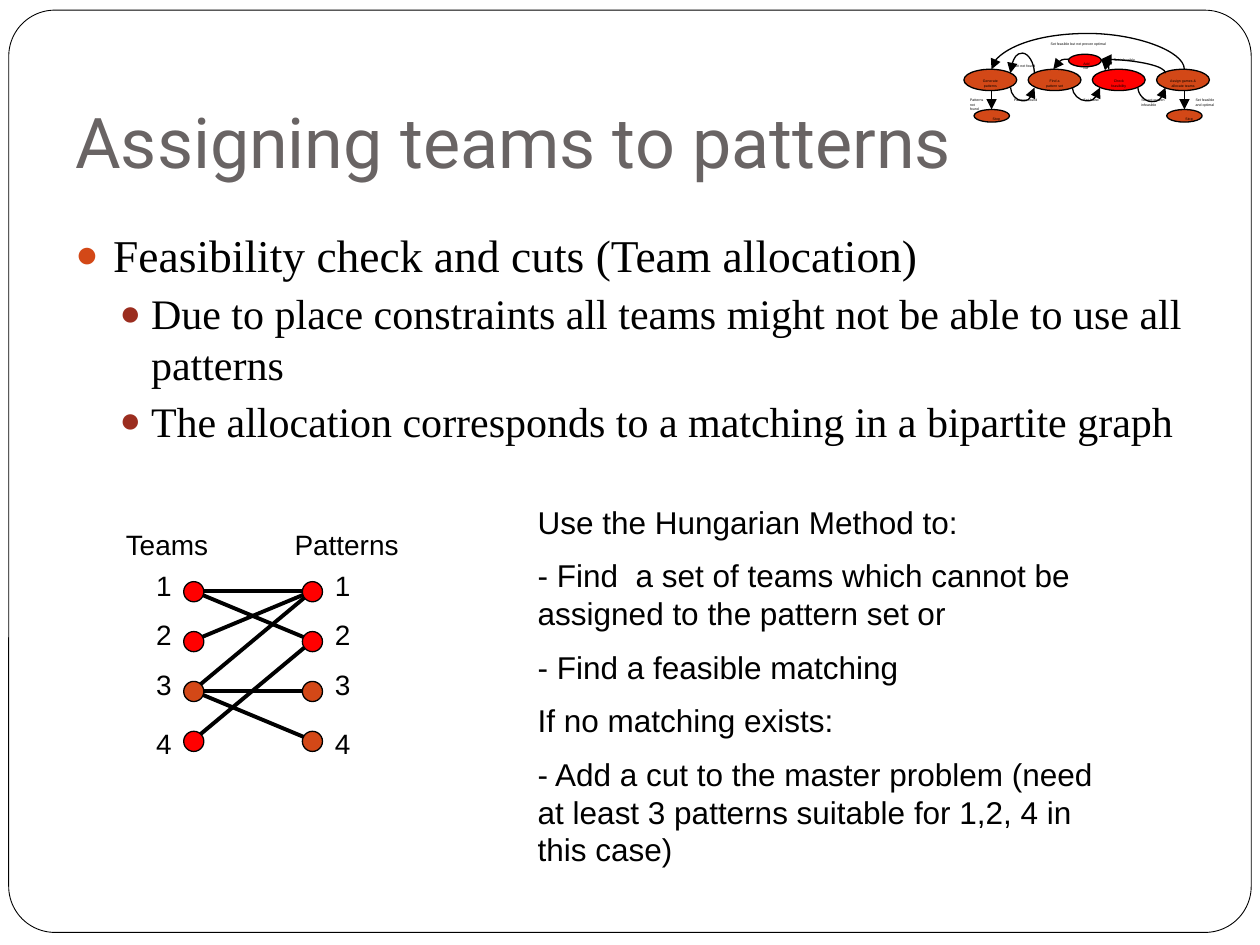
from lxml.etree import SubElement
from pptx import Presentation
from pptx.dml.color import RGBColor
from pptx.enum.shapes import MSO_CONNECTOR, MSO_SHAPE
from pptx.enum.text import MSO_ANCHOR, MSO_AUTO_SIZE, PP_ALIGN
from pptx.oxml.ns import qn
from pptx.util import Pt

ORANGE, RED, BLACK, WHITE = "D34817", "FF0000", "000000", "FFFFFF"

presentation = Presentation()
presentation.slide_width, presentation.slide_height = Pt(720), Pt(540)
slide = presentation.slides.add_slide(presentation.slide_layouts[6])
shapes = slide.shapes


def write(box, paragraphs, size, face="Arial", color=BLACK, frame_format=None, paragraph_format=None, gap=0):
    frame = shapes.add_textbox(*map(Pt, box)).text_frame
    for key, value in {"word_wrap": True, **(frame_format or {"auto_size": MSO_AUTO_SIZE.SHAPE_TO_FIT_TEXT})}.items():
        setattr(frame, key, value)
    for index, text in enumerate(paragraphs):
        paragraph = frame.paragraphs[0] if index == 0 else frame.add_paragraph()
        paragraph.text = text
        for key, value in {"space_before": Pt(gap if index else 0), **(paragraph_format or {})}.items():
            setattr(paragraph, key, value)
        for key, value in {"size": Pt(size), "name": face}.items():
            setattr(paragraph.runs[0].font, key, value)
        paragraph.runs[0].font.color.rgb = RGBColor.from_string(color)
    return frame


def draw(shape, weight, fill=None, arrow=False):
    shape.line.color.rgb = RGBColor.from_string(BLACK)
    shape.line.width = Pt(weight)
    if fill:
        shape.fill.solid()
        shape.fill.fore_color.rgb = RGBColor.from_string(fill)
        shape.shadow.inherit = False
    else:
        properties = shape._element.spPr
        if arrow:
            SubElement(properties.find(qn("a:ln")), qn("a:tailEnd"), type="triangle")
        SubElement(properties, qn("a:effectLst"))
    return shape


slide_border = shapes.add_shape(MSO_SHAPE.ROUNDED_RECTANGLE, Pt(5), Pt(5.8), Pt(710), Pt(527))
slide_border.adjustments[0] = 0.05
draw(slide_border, 0.5, WHITE)

write((36, 21.6, 648, 90), ["Assigning teams to patterns"], 40, "Roboto", "696464",
      {"vertical_anchor": MSO_ANCHOR.BOTTOM, "margin_bottom": Pt(7.2)})

outline = write((36, 126, 647.3, 356.4), [
    "Feasibility check and cuts (Team allocation)",
    "Due to place constraints all teams might not be able to use all patterns",
    "The allocation corresponds to a matching in a bipartite graph",
], 24, "Times New Roman", frame_format={"auto_size": MSO_AUTO_SIZE.NONE})
for paragraph, (level, size, before, left, hanging, bullet_color) in zip(
        outline.paragraphs, [(0, 26, 5.8, 21.6, 21.6, ORANGE)] + [(1, 24, 3.7, 43.2, 18, "9B2D1F")] * 2):
    for key, value in {"level": level, "space_before": Pt(before)}.items():
        setattr(paragraph, key, value)
    paragraph.runs[0].font.size = Pt(size)
    properties = paragraph._p.get_or_add_pPr()
    properties.set("marL", str(Pt(left)))
    properties.set("indent", str(-Pt(hanging)))
    SubElement(SubElement(properties, qn("a:buClr")), qn("a:srgbClr"), val=bullet_color)
    SubElement(properties, qn("a:buSzPct"), val="85000")
    SubElement(properties, qn("a:buFont"), typeface="Arial")
    SubElement(properties, qn("a:buChar"), char="●")

steps = [("Generate patterns", ORANGE, 24), ("Find a pattern set", ORANGE, 24),
         ("Check feasibility", RED, 24), ("Assign games & allocate teams", ORANGE, 30.2)]
for index, (step, color, label_width) in enumerate(steps):
    left = 550.8 + 36.7 * index
    draw(shapes.add_shape(MSO_SHAPE.OVAL, Pt(left), Pt(39.6), Pt(30.2), Pt(12.2)), 0.75, color)
    write((left + 15.1 - label_width / 2, 41.8, label_width, 12), [step], 2,
          paragraph_format={"alignment": PP_ALIGN.CENTER})

for left, top, width, color in [(610.6, 31, 18.7, RED), (556.6, 62.6, 20.2, ORANGE), (666.7, 62.6, 20.2, ORANGE)]:
    draw(shapes.add_shape(MSO_SHAPE.OVAL, Pt(left), Pt(top), Pt(width), Pt(7.2)), 0.75, color)

loop_thickness = 0.1
loops = [(577.4, 591.1, 50, 6.8), (591.1, 577.4, 41.8, -10), (612.7, 628.6, 50, 6.8),
         (676.8, 566.6, 39.6, -18), (650.2, 666, 50, 7.2)]
for start, end, level, depth in loops:
    span = abs(end - start)
    left, top = (start + end - loop_thickness) / 2, level - span / 2
    connector = shapes.add_connector(MSO_CONNECTOR.CURVE, Pt(left + loop_thickness), Pt(top), Pt(left), Pt(top + span))
    transform = connector._element.spPr.find(qn("a:xfrm"))
    transform.set("rot", "16200000")
    if depth < 0:
        transform.set("flipV", "1")
    guides = connector._element.spPr.find(qn("a:prstGeom")).find(qn("a:avLst"))
    SubElement(guides, qn("a:gd"), name="adj1", fmla=f"val {round(depth / loop_thickness * 100000)}")
    draw(connector, 0.75, arrow=True)

bends = [(633.6, 39.6, 629.3, 33.8, True), (610.6, 33.8, 601.9, 39.6, False), (666, 41.8, 629.3, 33.8, True)]
for x1, y1, x2, y2, upward in bends:
    corners = (x1, y1, x2, y2)
    if upward:
        middle_x, middle_y = (x1 + x2) / 2, (y1 + y2) / 2
        half_width, half_height = abs(y2 - y1) / 2, abs(x2 - x1) / 2
        corners = (middle_x + half_width, middle_y - half_height, middle_x - half_width, middle_y + half_height)
    connector = shapes.add_connector(MSO_CONNECTOR.CURVE, *map(Pt, corners))
    connector._element.spPr.find(qn("a:prstGeom")).set("prst", "curvedConnector2")
    if upward:
        connector._element.spPr.find(qn("a:xfrm")).set("rot", "5400000")
    draw(connector, 0.75, arrow=True)

for x in (566.6, 676.8):
    draw(shapes.add_connector(MSO_CONNECTOR.STRAIGHT, Pt(x), Pt(51.8), Pt(x), Pt(62.6)), 0.75, arrow=True)

flow_labels = [
    ("Add cut", 612, 31.7, 18.7), ("Stop", 560.2, 63.4, 18.7), ("Stop", 670.3, 63.4, 18.7),
    ("Patterns found", 572.4, 52.6, 30.2), ("Set found", 612, 52.6, 30.2),
    ("Set not found", 572.4, 33.1, 30.2), ("Set infeasible", 629.3, 29.5, 30.2),
    ("Set feasible but not proven optimal", 593.3, 20.2, 64), ("Patterns not found", 547.2, 52.6, 22.3),
    ("Set feasible and optimal", 676.1, 52.6, 27.4), ("Set not proven infeasible", 645.1, 52.6, 31),
]
for label, left, top, width in flow_labels:
    write((left, top, width, 10), [label], 2)

row_height = 28.5
for team, pattern in [(1, 1), (1, 2), (2, 1), (3, 1), (3, 3), (3, 4), (4, 2)]:
    team_y, pattern_y = (337.7 + row_height * (number - 1) for number in (team, pattern))
    draw(shapes.add_connector(MSO_CONNECTOR.STRAIGHT, Pt(110.2), Pt(team_y), Pt(178.6), Pt(pattern_y)), 2.25)

sides = [("Teams", 64.8, 68.4, 105, 82.1, (RED, RED, ORANGE, RED)),
         ("Patterns", 161.3, 90.7, 172.8, 184.3, (RED, RED, ORANGE, ORANGE))]
for heading, heading_left, heading_width, node_left, number_left, colors in sides:
    write((heading_left, 298.1, heading_width, 26.6), [heading], 16)
    for index, (color, number_top) in enumerate(zip(colors, (321.1, 349.4, 378, 411.8))):
        node_top = 332.4 + row_height * index
        draw(shapes.add_shape(MSO_SHAPE.OVAL, Pt(node_left), Pt(node_top), Pt(11.5), Pt(11.5)), 0.75, color)
        write((number_left, number_top, 23, 26.6), [str(index + 1)], 16)

write((300.2, 283.7, 334.8, 223.9), [
    "Use the Hungarian Method to:",
    "- Find  a set of teams which cannot be assigned to the pattern set or",
    "- Find a feasible matching",
    "If no matching exists:",
    "- Add a cut to the master problem (need at least 3 patterns suitable for 1,2, 4 in this case)",
], 18, gap=9)

presentation.save("out.pptx")
